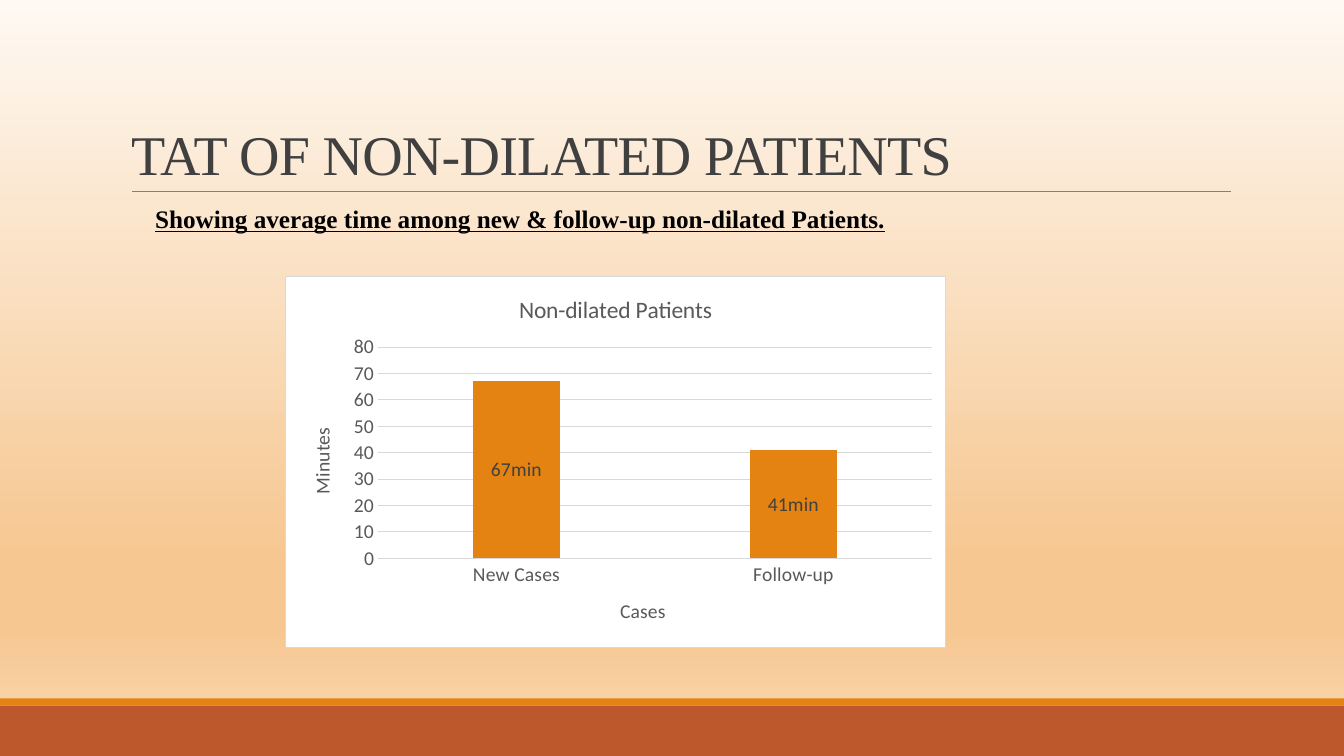
import pptx
import pptx.chart.data
import pptx.dml.color
import pptx.enum.chart
import pptx.enum.shapes
import pptx.enum.text
import pptx.oxml
import pptx.oxml.ns
import pptx.util
from pptx.util import Cm, Pt

SERIF = "Times New Roman"
SANS = "Calibri"
ORANGE = "E48312"
GREY = "595959"
PALE_GREY = "D9D9D9"
qn = pptx.oxml.ns.qn


def colour(value):
    return pptx.dml.color.RGBColor.from_string(value)


def style_font(font, name, size, value):
    font.name = name
    font.size = Pt(size)
    font.color.rgb = colour(value)


def style_line(line, value, width):
    line.color.rgb = colour(value)
    line.width = Pt(width)


def set_background(slide, stops):
    fill = slide.background.fill
    fill.gradient()
    fill.gradient_angle = 270
    stop_list = slide.element.find(".//" + qn("a:gsLst"))
    for stop in list(stop_list):
        stop_list.remove(stop)
    for percent, value in stops:
        stop = stop_list.makeelement(qn("a:gs"), {"pos": str(percent * 1000)})
        stop.append(stop.makeelement(qn("a:srgbClr"), {"val": value}))
        stop_list.append(stop)


def add_band(slide, top, height, value):
    band = slide.shapes.add_shape(
        pptx.enum.shapes.MSO_SHAPE.RECTANGLE, 0, Cm(top), Cm(33.87), Cm(height))
    band.shadow.inherit = False
    band.fill.solid()
    band.fill.fore_color.rgb = colour(value)
    band.line.fill.background()


def add_rule(slide, left, right, top):
    rule = slide.shapes.add_connector(
        pptx.enum.shapes.MSO_CONNECTOR.STRAIGHT, Cm(left), Cm(top), Cm(right), Cm(top))
    style_line(rule.line, "808080", 0.5)
    properties = rule.element.spPr
    properties.append(properties.makeelement(qn("a:effectLst"), {}))


def set_title(slide, text):
    title = slide.shapes.title
    title.left, title.top, title.width, title.height = Cm(3.05), Cm(0.79), Cm(27.94), Cm(4.04)
    frame = title.text_frame
    frame.text = text
    frame.vertical_anchor = pptx.enum.text.MSO_ANCHOR.BOTTOM
    frame.auto_size = pptx.enum.text.MSO_AUTO_SIZE.NONE
    paragraph = frame.paragraphs[0]
    paragraph.alignment = pptx.enum.text.PP_ALIGN.LEFT
    paragraph.line_spacing = 0.85
    style_font(paragraph.font, SERIF, 40, "404040")
    # Tighter letter spacing, in hundredths of a point
    paragraph.runs[0].font._element.set("spc", "-50")


def add_subtitle(slide, text):
    box = slide.shapes.add_textbox(Cm(3.66), Cm(5), Cm(24.94), Cm(1.02))
    frame = box.text_frame
    frame.word_wrap = True
    frame.text = text
    paragraph = frame.paragraphs[0]
    paragraph.alignment = pptx.enum.text.PP_ALIGN.JUSTIFY
    style_font(paragraph.font, SERIF, 18, "000000")
    paragraph.font.bold = True
    paragraph.font.underline = True


def set_chart_text(title_owner, text, size):
    frame = title_owner.text_frame
    frame.text = text
    font = frame.paragraphs[0].font
    style_font(font, SANS, size, GREY)
    font.bold = False


def style_axis(axis, title):
    axis.major_tick_mark = pptx.enum.chart.XL_TICK_MARK.NONE
    axis.minor_tick_mark = pptx.enum.chart.XL_TICK_MARK.NONE
    style_font(axis.tick_labels.font, SANS, 14, GREY)
    set_chart_text(axis.axis_title, title, 14)


def frame_chart(chart):
    # White panel with a thin border
    panel = pptx.oxml.parse_xml(
        f'<c:spPr {pptx.oxml.ns.nsdecls("c", "a")}>'
        '<a:solidFill><a:srgbClr val="FFFFFF"/></a:solidFill>'
        f'<a:ln w="9525"><a:solidFill><a:srgbClr val="{PALE_GREY}"/></a:solidFill></a:ln>'
        '</c:spPr>')
    chart.element.find(qn("c:chart")).addnext(panel)


def place_plot(chart, left, top, width, height):
    # Inner plot area, as fractions of the chart
    plot_area = chart.element.find(".//" + qn("c:plotArea"))
    for layout in plot_area.findall(qn("c:layout")):
        plot_area.remove(layout)
    plot_area.insert(0, pptx.oxml.parse_xml(
        f'<c:layout {pptx.oxml.ns.nsdecls("c")}><c:manualLayout>'
        '<c:layoutTarget val="inner"/><c:xMode val="edge"/><c:yMode val="edge"/>'
        f'<c:x val="{left}"/><c:y val="{top}"/><c:w val="{width}"/><c:h val="{height}"/>'
        '</c:manualLayout></c:layout>'))


def add_time_chart(slide):
    data = pptx.chart.data.CategoryChartData()
    data.categories = ["New Cases", "Follow-up"]
    data.add_series("Series 1", [67, 41])
    chart = slide.shapes.add_chart(
        pptx.enum.chart.XL_CHART_TYPE.COLUMN_CLUSTERED,
        Cm(7.19), Cm(6.96), Cm(16.64), Cm(9.37), data).chart
    style_font(chart.font, SANS, 14, "000000")
    chart.has_legend = False
    set_chart_text(chart.chart_title, "Non-dilated Patients", 16.8)
    frame_chart(chart)
    place_plot(chart, 0.14, 0.19, 0.84, 0.57)

    # Axes
    style_axis(chart.category_axis, "Cases")
    style_line(chart.category_axis.format.line, PALE_GREY, 0.75)
    minutes = chart.value_axis
    style_axis(minutes, "Minutes")
    minutes.minimum_scale, minutes.maximum_scale, minutes.major_unit = 0, 80, 10
    minutes.format.line.fill.background()
    style_line(minutes.major_gridlines.format.line, PALE_GREY, 0.75)

    # Columns and their labels
    plot = chart.plots[0]
    plot.gap_width, plot.overlap, plot.vary_by_categories = 219, -27, False
    series = plot.series[0]
    series.format.fill.solid()
    series.format.fill.fore_color.rgb = colour(ORANGE)
    labels = series.data_labels
    labels.show_value = True
    labels.number_format = '0"min"'
    labels.number_format_is_linked = False
    labels.position = pptx.enum.chart.XL_LABEL_POSITION.CENTER
    style_font(labels.font, SANS, 14, "404040")


def main():
    presentation = pptx.Presentation()
    presentation.slide_width, presentation.slide_height = Cm(33.87), Cm(19.05)
    slide = presentation.slides.add_slide(presentation.slide_layouts[5])

    # Backdrop
    set_background(slide, [(0, "FEF9F3"), (74, "F6C791"), (83, "F6C791"), (100, "F9DAB6")])
    add_band(slide, 17.78, 1.27, "BD582C")
    add_band(slide, 17.6, 0.18, ORANGE)
    add_rule(slide, 3.33, 31.01, 4.83)

    # Content
    set_title(slide, "TAT OF NON-DILATED PATIENTS")
    add_subtitle(slide, "Showing average time among new & follow-up non-dilated Patients.")
    add_time_chart(slide)
    presentation.save("out.pptx")


if __name__ == "__main__":
    main()
